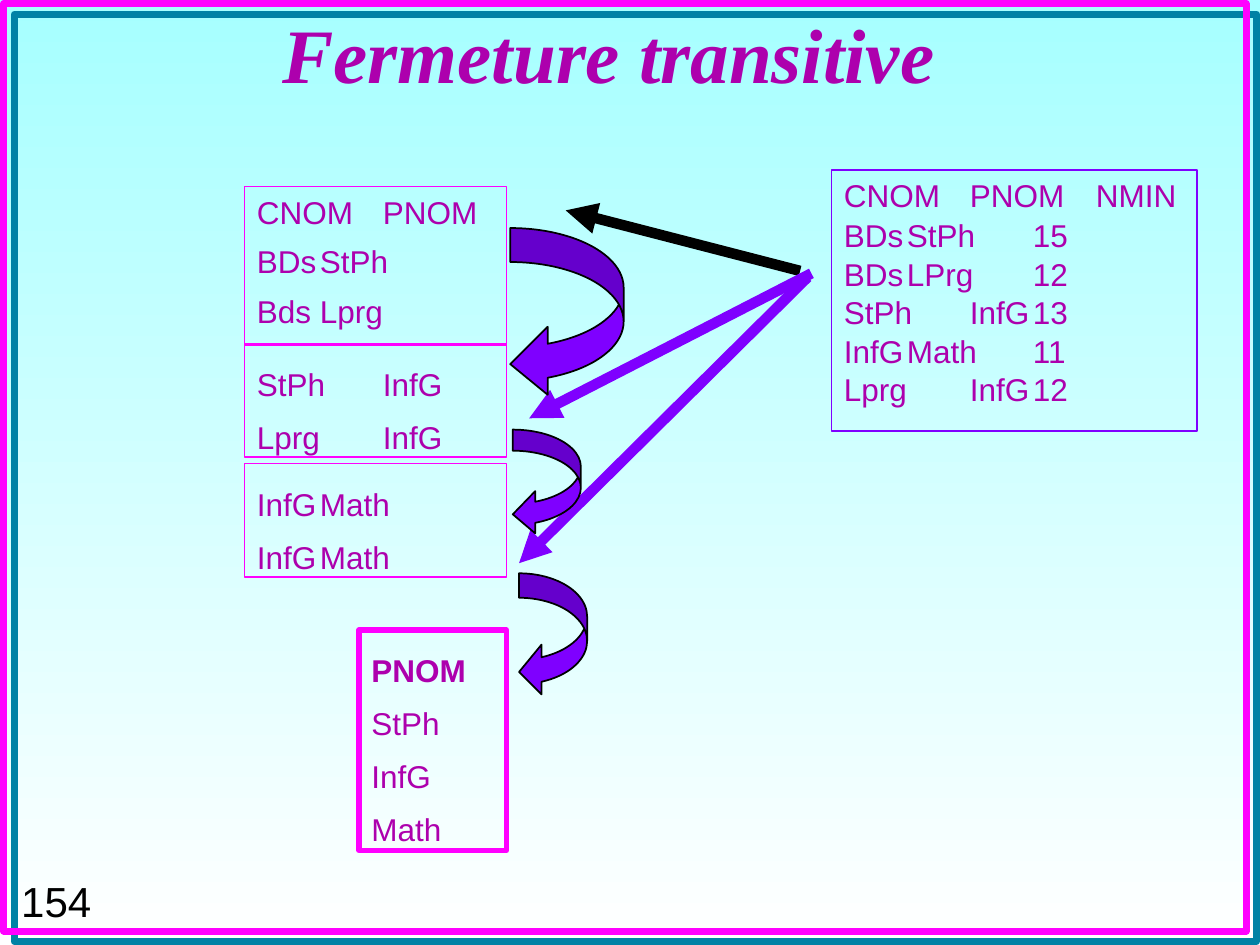
"""Build the slide on transitive closure, with its tables, links and loop arrows."""
from dataclasses import dataclass

from lxml.etree import SubElement
from pptx import Presentation
from pptx.dml.color import RGBColor
from pptx.enum.shapes import MSO_CONNECTOR, MSO_SHAPE
from pptx.enum.text import MSO_ANCHOR, PP_ALIGN
from pptx.oxml.ns import qn
from pptx.util import Inches, Pt

COLORS = {
    "frame": "FF00FF",
    "frame_shadow": "0082A5",
    "text": "AD00AD",
    "violet": "7F00FF",
    "black": "000000",
    "sky": "A6FFFF",
    "white": "FFFFFF",
}
TITLE_FONT = {"name": "Times New Roman", "size": Pt(44), "bold": True, "italic": True}
BODY_FONT = {"name": "Arial", "size": Pt(18), "bold": False}
NUMBER_FONT = {"name": "Arial", "size": Pt(24)}
SPACED = {"space_before": Pt(9)}
TIGHT = {"line_spacing": 0.6, **SPACED}
MEDIUM = {"line_spacing": 0.9, **SPACED}
LOOSE = {"line_spacing": 1.4}


@dataclass
class Box:
    place: tuple[float, float, float, float]
    lines: list[str]
    first_format: dict
    other_format: dict
    color: str = "frame"
    weight: float = 1
    bold_header: bool = False


@dataclass
class Link:
    start: tuple[float, float]
    end: tuple[float, float]
    color: str = "violet"


@dataclass
class Loop:
    place: tuple[float, float, float, float]
    adjustments: tuple[float, float, float]


TABLES = [
    Box((1.94, 1.48, 2.08, 1.26), ["CNOM\tPNOM", "BDs\tStPh", "Bds\tLprg"], SPACED, MEDIUM),
    Box(
        (6.6, 1.35, 2.9, 2.07),
        ["CNOM\tPNOM\tNMIN", "BDs\tStPh\t15", "BDs\tLPrg\t12",
         "StPh\tInfG\t13", "InfG\tMath\t11", "Lprg\tInfG\t12"],
        SPACED, TIGHT, color="violet",
    ),
]
LINKS = [
    Link((6.35, 2.15), (4.49, 1.67), "black"),
    Link((6.44, 2.17), (4.2, 3.32)),
    Link((6.41, 2.2), (4.12, 4.47)),
]
LOOPS = [
    Loop((4.05, 1.81, 0.9, 1.35), (0.3, 0.6, 0.33)),
    Loop((4.07, 3.41, 0.54, 0.84), (0.31, 0.62, 0.33)),
    Loop((4.12, 4.55, 0.54, 0.98), (0.36, 0.73, 0.33)),
]
STEPS = [
    Box((1.94, 2.73, 2.08, 0.9), ["StPh\tInfG\vLprg\tInfG"], LOOSE, LOOSE),
    Box((1.94, 3.68, 2.08, 0.9), ["InfG\tMath\vInfG\tMath"], LOOSE, LOOSE),
    Box((2.85, 5, 1.17, 1.75), ["PNOM", "StPh", "InfG", "Math"], LOOSE, LOOSE,
        weight=3, bold_header=True),
]


def rgb(name: str) -> RGBColor:
    return RGBColor.from_string(COLORS[name])


def apply_format(target, values: dict) -> None:
    for name, value in values.items():
        setattr(target, name, value)


def write(paragraph, text: str, font: dict, color: str, layout: dict) -> None:
    paragraph.text = text
    apply_format(paragraph, layout)
    for run in paragraph.runs:
        apply_format(run.font, font)
        run.font.color.rgb = rgb(color)


def set_line(shape, color: str, weight: float) -> None:
    shape.line.color.rgb = rgb(color)
    shape.line.width = Pt(weight)


def add_outline(slide, place: tuple, color: str, weight: float):
    shape = slide.shapes.add_shape(MSO_SHAPE.RECTANGLE, *map(Inches, place))
    shape.shadow.inherit = False
    shape.fill.background()
    set_line(shape, color, weight)
    return shape


def add_frame(slide) -> None:
    frame = add_outline(slide, (0.03, 0.03, 9.86, 7.36), "frame", 4)
    effects = frame._element.spPr.find(qn("a:effectLst"))
    shadow = SubElement(effects, qn("a:outerShdw"), dist=str(Pt(8.5)),
                        dir="2700000", algn="ctr", rotWithShape="0")
    SubElement(shadow, qn("a:srgbClr"), val=COLORS["frame_shadow"])


def add_box(slide, box: Box) -> None:
    shape = add_outline(slide, box.place, box.color, box.weight)
    frame = shape.text_frame
    apply_format(frame, {"word_wrap": True, "vertical_anchor": MSO_ANCHOR.TOP})
    for index, line in enumerate(box.lines):
        paragraph = frame.add_paragraph() if index else frame.paragraphs[0]
        layout = box.other_format if index else box.first_format
        font = {**BODY_FONT, "bold": box.bold_header and index == 0}
        write(paragraph, line, font, "text", {"alignment": PP_ALIGN.LEFT, **layout})


def add_link(slide, link: Link) -> None:
    connector = slide.shapes.add_connector(
        MSO_CONNECTOR.STRAIGHT, *map(Inches, link.start + link.end))
    set_line(connector, link.color, 6)
    SubElement(connector.line._get_or_add_ln(), qn("a:tailEnd"), type="triangle")
    SubElement(connector._element.spPr, qn("a:effectLst"))


def add_loop(slide, loop: Loop) -> None:
    shape = slide.shapes.add_shape(MSO_SHAPE.CURVED_LEFT_ARROW, *map(Inches, loop.place))
    shape.shadow.inherit = False
    shape.fill.solid()
    shape.fill.fore_color.rgb = rgb("violet")
    set_line(shape, "black", 1)
    for index, value in enumerate(loop.adjustments):
        shape.adjustments[index] = value


def add_title(slide) -> None:
    title = slide.shapes.title
    sides = ("left", "top", "width", "height")
    apply_format(title, dict(zip(sides, map(Inches, (1.17, 0, 7.48, 0.83)))))
    title.text_frame.vertical_anchor = MSO_ANCHOR.MIDDLE
    write(title.text_frame.paragraphs[0], "Fermeture transitive ", TITLE_FONT, "text",
          {"alignment": PP_ALIGN.CENTER})


def add_number(slide) -> None:
    number = slide.shapes.add_textbox(*map(Inches, (0.07, 6.9, 0.8, 0.5)))
    number.text_frame.word_wrap = False
    write(number.text_frame.paragraphs[0], "154", NUMBER_FONT, "black", {})


def paint_background(slide) -> None:
    fill = slide.background.fill
    fill.gradient()
    fill.gradient_angle = 270
    for stop, color in zip(fill.gradient_stops, ("sky", "white")):
        stop.color.rgb = rgb(color)


def main() -> None:
    presentation = Presentation()
    presentation.slide_width, presentation.slide_height = Inches(10), Inches(7.5)
    slide = presentation.slides.add_slide(presentation.slide_layouts[5])
    paint_background(slide)
    add_number(slide)
    add_frame(slide)
    add_title(slide)
    for items, draw in ((TABLES, add_box), (LINKS, add_link), (LOOPS, add_loop), (STEPS, add_box)):
        for item in items:
            draw(slide, item)
    presentation.save("out.pptx")


if __name__ == "__main__":
    main()
